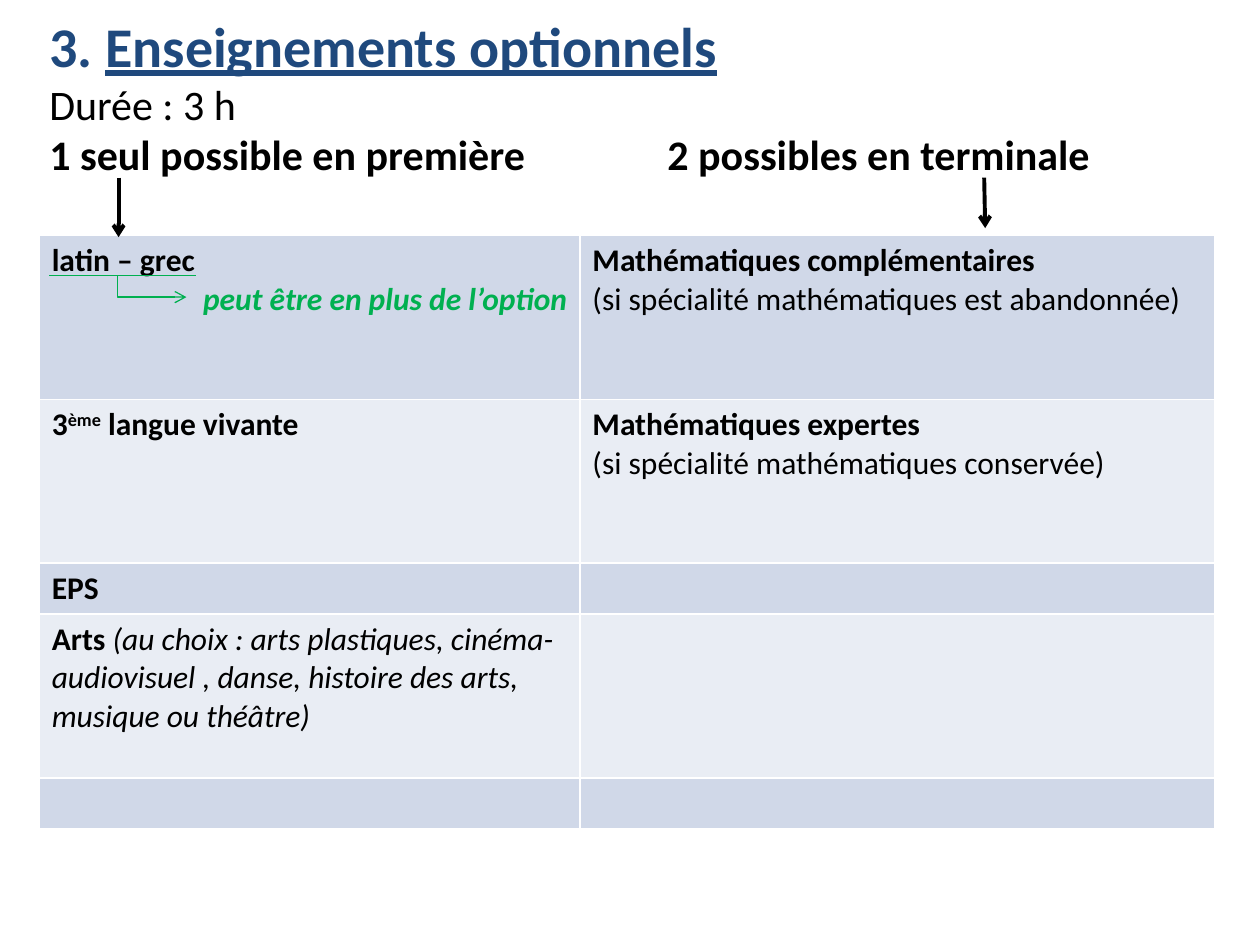
from lxml import etree
from pptx import Presentation
from pptx.dml.color import RGBColor
from pptx.enum.shapes import MSO_CONNECTOR
from pptx.enum.text import MSO_ANCHOR, MSO_AUTO_SIZE, PP_ALIGN
from pptx.oxml.ns import qn
from pptx.util import Cm, Pt

STRAIGHT, ELBOW = MSO_CONNECTOR.STRAIGHT, MSO_CONNECTOR.ELBOW
LEFT, RIGHT = PP_ALIGN.LEFT, PP_ALIGN.RIGHT
TOP, NO_AUTOFIT = MSO_ANCHOR.TOP, MSO_AUTO_SIZE.NONE
TITLE_ONLY = 5

FONT = "Calibri"
BLACK, WHITE, NAVY, GREEN = "000000", "FFFFFF", "1F497D", "00B050"
BANDS = ["D0D8E8", "E9EDF4"]

# Each cell is a list of paragraphs; each paragraph a list of (text, format) runs
BOLD = {"bold": True}
TABLE_ROWS = [
    [[[("latin – grec", BOLD)],
      [("peut être en plus de l’option", {"bold": True, "italic": True, "color": GREEN})]],
     [[("Mathématiques complémentaires", BOLD)],
      [("(si spécialité mathématiques est abandonnée)", {})]]],
    [[[("3", BOLD), ("ème", {"bold": True, "superscript": True}), (" langue vivante", BOLD)]],
     [[("Mathématiques expertes", BOLD)],
      [("(si spécialité mathématiques conservée)", {})]]],
    [[[("EPS", BOLD)]], []],
    [[[("Arts ", BOLD),
       ("(au choix : arts plastiques, cinéma-audiovisuel , danse, histoire des arts, "
        "musique ou théâtre)", {"italic": True})]], []],
    [[], []],
]
COLUMN_WIDTHS = [10.9, 12.8]
ROW_HEIGHTS = [3.3, 3.3, 1.03, 3.3, 1.03]


def rgb(value):
    return RGBColor.from_string(value)


def add_run(paragraph, text, size=18, color=BLACK, bold=False, italic=False,
            underline=False, superscript=False):
    run = paragraph.add_run()
    run.text = text
    font = run.font
    font.name, font.size = FONT, Pt(size)
    font.bold, font.italic, font.underline = bold, italic, underline
    font.color.rgb = rgb(color)
    if superscript:
        font._element.set("baseline", "30000")


def write_paragraphs(text_frame, paragraphs):
    text_frame.text = "\n" * (len(paragraphs) - 1)
    for paragraph, runs in zip(text_frame.paragraphs, paragraphs):
        for text, style in runs:
            add_run(paragraph, text, **style)


def add_line(slide, kind, start, end, color, width, arrow=True):
    line = slide.shapes.add_connector(kind, *(Cm(value) for value in (*start, *end)))
    line.line.color.rgb = rgb(color)
    line.line.width = Pt(width)
    if arrow:
        etree.SubElement(line.line._get_or_add_ln(), qn("a:tailEnd"), type="arrow")
    etree.SubElement(line._element.spPr, qn("a:effectLst"))


def fill_heading(slide, left, top, width, height):
    """Title, duration and the two column captions."""
    title = slide.shapes.title
    title.left, title.top, title.width, title.height = map(Cm, (left, top, width, height))
    text_frame = title.text_frame
    text_frame.word_wrap = True
    text_frame.auto_size = NO_AUTOFIT
    text_frame.vertical_anchor = TOP
    heading = {"size": 32, "color": NAVY, "bold": True}
    write_paragraphs(text_frame, [
        [("3. ", heading), ("Enseignements optionnels", {**heading, "underline": True})],
        [("Durée : 3 h", {"size": 24})],
        [("1 seul possible en première\t2 possibles en terminale", {"size": 24, "bold": True})],
    ])
    for paragraph in text_frame.paragraphs:
        paragraph.alignment = LEFT
    # The tab stop aligns the second caption
    tabs = etree.SubElement(text_frame.paragraphs[-1]._p.get_or_add_pPr(), qn("a:tabLst"))
    etree.SubElement(tabs, qn("a:tab"), pos=str(Cm(12.46)), algn="l")


def set_borders(cell):
    properties = cell._tc.get_or_add_tcPr()
    for position, side in enumerate(("lnL", "lnR", "lnT", "lnB")):
        border = etree.Element(qn(f"a:{side}"), w=str(Pt(1)))
        fill = etree.SubElement(border, qn("a:solidFill"))
        etree.SubElement(fill, qn("a:srgbClr"), val=WHITE)
        properties.insert(position, border)


def add_options_table(slide, left, top):
    """Options by school year, with banded rows."""
    table = slide.shapes.add_table(
        len(ROW_HEIGHTS), len(COLUMN_WIDTHS), Cm(left), Cm(top),
        Cm(sum(COLUMN_WIDTHS)), Cm(sum(ROW_HEIGHTS))).table
    table.first_row = table.horz_banding = False
    for column, width in zip(table.columns, COLUMN_WIDTHS):
        column.width = Cm(width)
    for index, (row, height, contents) in enumerate(zip(table.rows, ROW_HEIGHTS, TABLE_ROWS)):
        row.height = Cm(height)
        for cell, paragraphs in zip(row.cells, contents):
            cell.fill.solid()
            cell.fill.fore_color.rgb = rgb(BANDS[index % 2])
            set_borders(cell)
            if paragraphs:
                write_paragraphs(cell.text_frame, paragraphs)
    table.cell(0, 0).text_frame.paragraphs[1].alignment = RIGHT


def add_arrows(slide, left, top):
    """Arrows from the captions to the table, placed from its top left corner."""
    def point(x, y):
        return left + x, top + y

    add_line(slide, STRAIGHT, point(1.6, -1.17), point(1.6, 0.03), BLACK, 2.25)
    add_line(slide, STRAIGHT, point(19.05, -1.17), point(19.07, -0.15), BLACK, 2.25)
    # Underline of the ancient languages and the link to their remark
    add_line(slide, ELBOW, point(0.2, 0.81), point(2.97, 1.24), GREEN, 0.75)
    add_line(slide, STRAIGHT, point(0.4, 0.81), point(3.17, 0.81), GREEN, 0.75, arrow=False)


def main():
    presentation = Presentation()
    presentation.slide_width, presentation.slide_height = Cm(25.4), Cm(19.05)
    slide = presentation.slides.add_slide(presentation.slide_layouts[TITLE_ONLY])
    fill_heading(slide, 0.74, 0.1, 23.8, 4.7)
    add_options_table(slide, 0.79, 4.75)
    add_arrows(slide, 0.79, 4.75)
    presentation.save("out.pptx")


if __name__ == "__main__":
    main()
